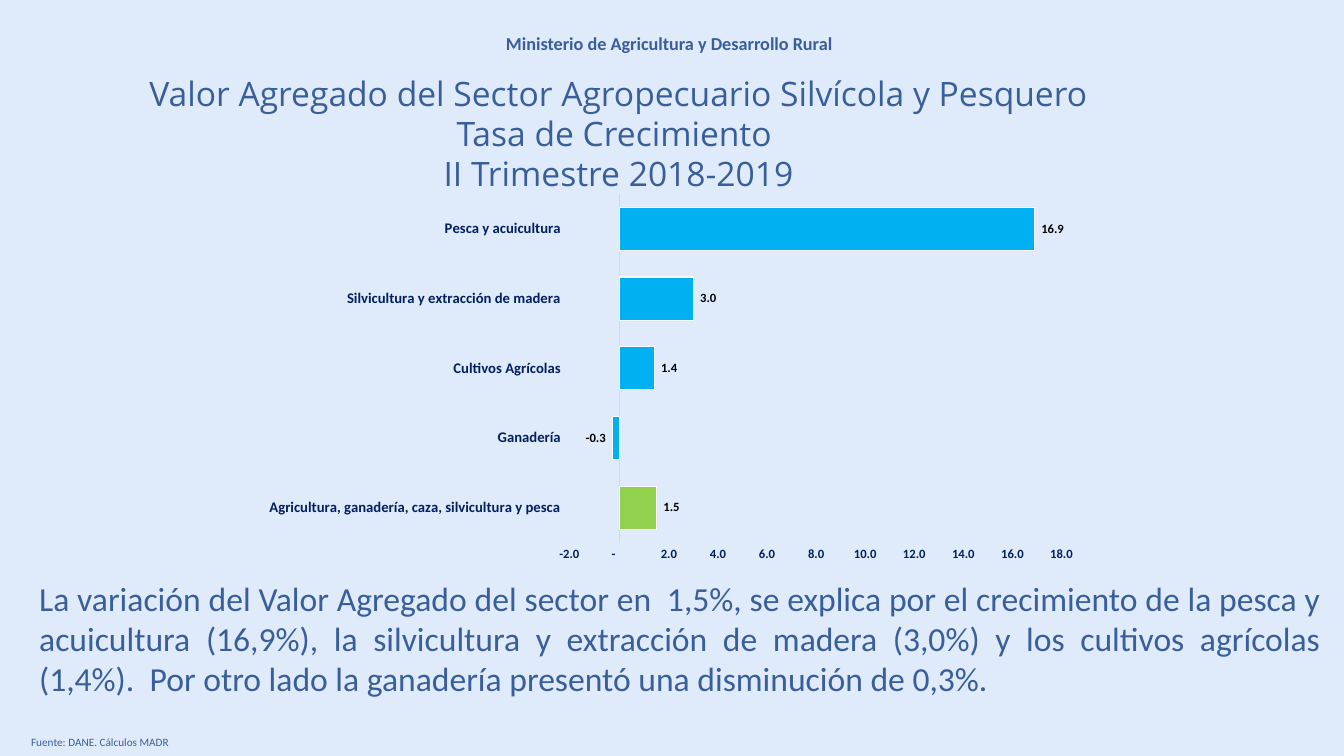
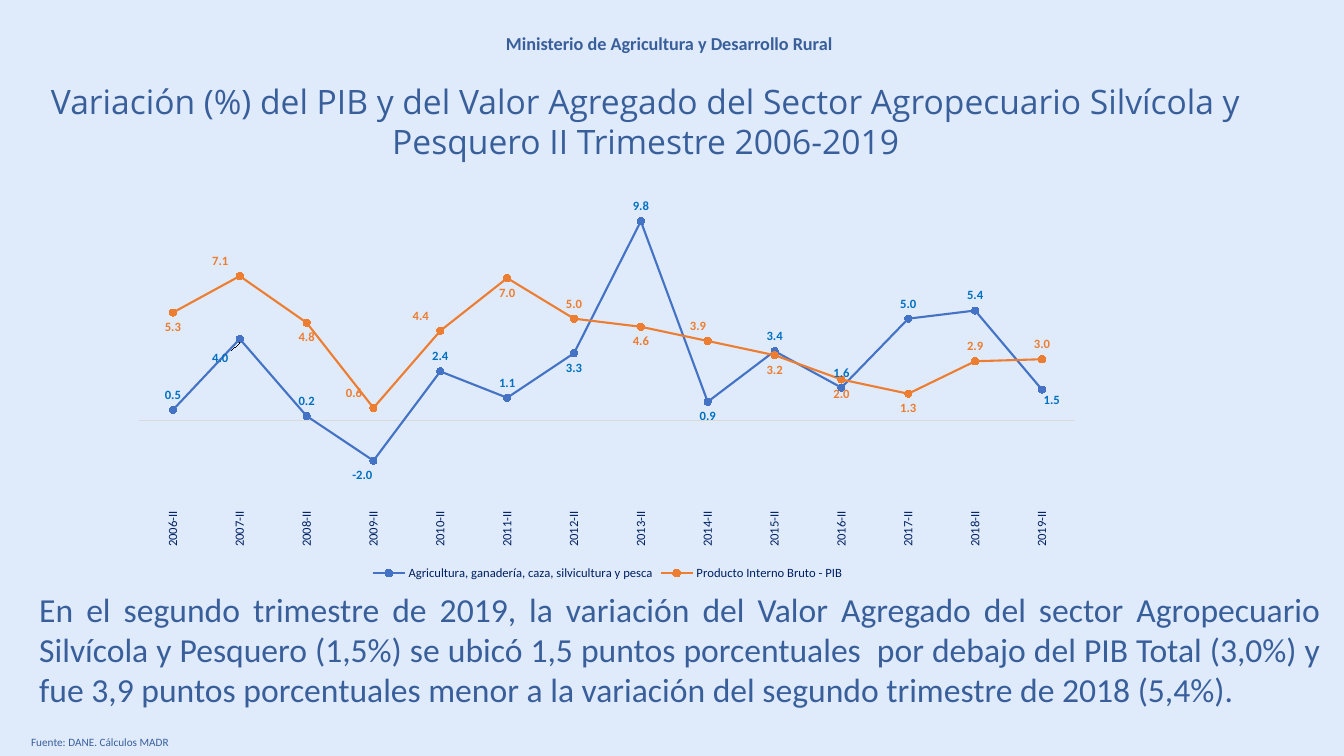
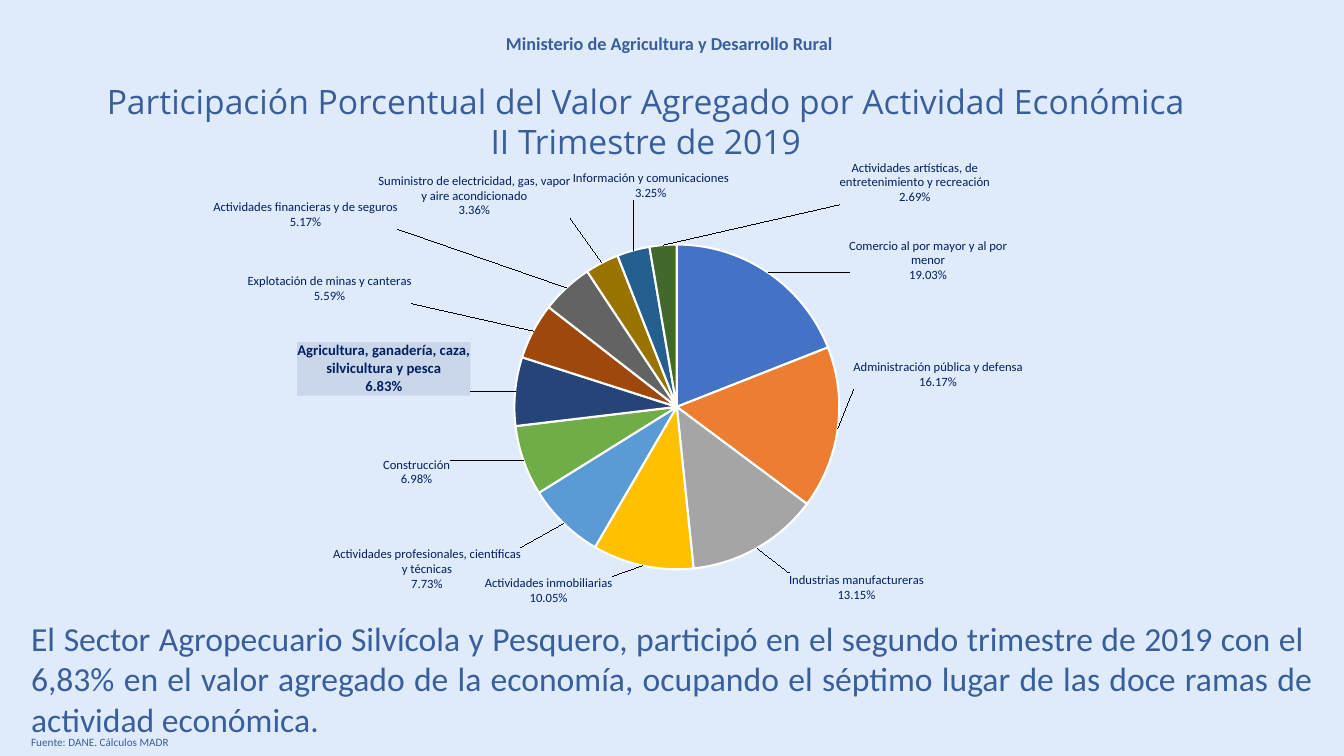
from lxml import etree
from pptx import Presentation
from pptx.chart.data import CategoryChartData
from pptx.dml.color import RGBColor
from pptx.enum.chart import XL_CHART_TYPE as ChartType
from pptx.enum.chart import XL_LABEL_POSITION as LabelPosition
from pptx.enum.chart import XL_LEGEND_POSITION as LegendPosition
from pptx.enum.chart import XL_MARKER_STYLE as MarkerStyle
from pptx.enum.chart import XL_TICK_LABEL_POSITION as TickLabelPosition
from pptx.enum.chart import XL_TICK_MARK as TickMark
from pptx.enum.text import MSO_ANCHOR as Anchor
from pptx.enum.text import MSO_AUTO_SIZE as AutoSize
from pptx.enum.text import PP_ALIGN as Align
from pptx.oxml.ns import qn
from pptx.util import Inches, Pt

BACKGROUND = RGBColor(0xDF, 0xEA, 0xFB)
TEXT_BLUE = RGBColor(0x39, 0x5F, 0x9B)
NAVY = RGBColor(0x00, 0x20, 0x60)
BLACK = RGBColor(0x00, 0x00, 0x00)
WHITE = RGBColor(0xFF, 0xFF, 0xFF)
AXIS_GREY = RGBColor(0xD9, 0xD9, 0xD9)
BAR_BLUE = RGBColor(0x00, 0xB0, 0xF0)
BAR_GREEN = RGBColor(0x92, 0xD0, 0x50)
LABEL_BLUE = RGBColor(0x00, 0x70, 0xC0)
LINE_BLUE = RGBColor(0x44, 0x72, 0xC4)
LINE_ORANGE = RGBColor(0xED, 0x7D, 0x31)
HIGHLIGHT = "CAD6EA"
SLICE_COLORS = [RGBColor.from_string(code) for code in (
    "4472C4", "ED7D31", "A5A5A5", "FFC000", "5B9BD5", "70AD47",
    "264478", "9E480E", "636363", "997300", "255E91", "43682B")]

BODY_FONT = "Calibri"
TITLE_FONT = "Open Sans"
NUMBER_FORMAT = '_-* #,##0.0_-;\\-* #,##0.0_-;_-* "-"??_-;'
PERCENT_FORMAT = "0.00%"
ABOVE, BELOW = LabelPosition.ABOVE, LabelPosition.BELOW

SECTOR = "Agricultura, ganadería, caza, silvicultura y pesca"
GROWTH = [
    (SECTOR, 1.5),
    ("Ganadería", -0.3),
    ("Cultivos Agrícolas", 1.4),
    ("Silvicultura y extracción de madera", 3),
    ("Pesca y acuicultura", 16.9),
]
QUARTERS = [f"{year}-II" for year in range(2006, 2020)]
SECTOR_RATES = [0.5, 4, 0.2, -2, 2.4, 1.1, 3.3, 9.8, 0.9, 3.4, 1.6, 5, 5.4, 1.5]
GDP_RATES = [5.3, 7.1, 4.8, 0.6, 4.4, 7, 5, 4.6, 3.9, 3.2, 2, 1.3, 2.9, 3]
SECTOR_LABELS = [
    (1, BELOW, -0.02, 0.01), (3, BELOW, -0.01, 0), (6, BELOW, 0, 0),
    (8, BELOW, 0, 0), (12, ABOVE, 0, 0), (13, BELOW, 0.01, -0.01),
]
GDP_LABELS = [
    (1, ABOVE, -0.02, 0), (3, ABOVE, -0.02, 0), (4, ABOVE, -0.02, 0),
    (6, ABOVE, 0, 0), (8, ABOVE, -0.01, 0), (12, ABOVE, 0, 0), (13, ABOVE, 0, 0),
]
SHARES = [
    ("Comercio al por mayor y al por menor", 19.03, 0.08, 0.03),
    ("Administración pública y defensa", 16.17, 0.01, -0.14),
    ("Industrias manufactureras", 13.15, 0.03, 0.04),
    ("Actividades inmobiliarias", 10.05, -0.03, 0.01),
    ("Actividades profesionales, científicas y técnicas", 7.73, -0.04, 0.04),
    ("Construcción", 6.98, -0.07, -0.01),
    (SECTOR, 6.83, -0.04, 0.01),
    ("Explotación de minas y canteras", 5.59, -0.12, -0.05),
    ("Actividades financieras y de seguros", 5.17, -0.17, -0.11),
    ("Suministro de electricidad, gas, vapor y aire acondicionado", 3.36, -0.03, -0.08),
    ("Información y comunicaciones", 3.25, 0.1, -0.09),
    ("Actividades artísticas, de entretenimiento y recreación", 2.69, 0.26, -0.07),
]


def style_font(font, size, color, bold=False, name=BODY_FONT):
    font.name = name
    font.size = Pt(size)
    font.bold = bold
    font.color.rgb = color


def fill_text(shape, lines, size, align, wrap=True, bold=False, name=BODY_FONT):
    frame = shape.text_frame
    frame.word_wrap = wrap
    frame.auto_size = AutoSize.SHAPE_TO_FIT_TEXT
    frame.vertical_anchor = Anchor.TOP
    for index, line in enumerate(lines):
        paragraph = frame.add_paragraph() if index else frame.paragraphs[0]
        paragraph.alignment = align
        run = paragraph.add_run()
        run.text = line
        style_font(run.font, size, TEXT_BLUE, bold, name)


def add_text(slide, place, line, size, align=Align.JUSTIFY, wrap=True, bold=False):
    box = slide.shapes.add_textbox(*map(Inches, place))
    fill_text(box, [line], size, align, wrap, bold)


def add_content_slide(presentation, title_place, title_lines, body_place, body, wrap=True):
    slide = presentation.slides.add_slide(presentation.slide_layouts[5])
    title = slide.shapes.title
    title.left, title.top, title.width, title.height = map(Inches, title_place)
    fill_text(title, title_lines, 24, Align.CENTER, wrap, name=TITLE_FONT)
    add_text(slide, (4.92, 0.27, 3.49, 0.32), "Ministerio de Agricultura y Desarrollo Rural",
             13, Align.LEFT, wrap=False, bold=True)
    add_text(slide, body_place, body, 24)
    add_text(slide, (0.21, 7.25, 12.91, 0.24), "Fuente: DANE. Cálculos MADR", 8)
    return slide


def chart_element(tag, **attributes):
    element = etree.Element(qn(tag))
    for name, value in attributes.items():
        element.set(name, str(value))
    return element


def manual_layout(**values):
    layout = chart_element("c:layout")
    manual = etree.SubElement(layout, qn("c:manualLayout"))
    for name, value in values.items():
        manual.append(chart_element(f"c:{name}", val=value))
    return layout


def set_plot_area(chart, left, top, width, height):
    plot_area = chart._chartSpace.chart.plotArea
    for layout in plot_area.findall(qn("c:layout")):
        plot_area.remove(layout)
    plot_area.insert(0, manual_layout(layoutTarget="inner", xMode="edge", yMode="edge",
                                      x=left, y=top, w=width, h=height))


def add_chart(slide, kind, place, categories, series, font_color):
    data = CategoryChartData()
    data.categories = categories
    for name, values in series:
        data.add_series(name, values)
    chart = slide.shapes.add_chart(kind, *map(Inches, place), data).chart
    chart.has_title = False
    chart.has_legend = False
    style_font(chart.font, 10, font_color)
    return chart


def style_category_axis(axis, size, bold=False):
    axis.tick_label_position = TickLabelPosition.LOW
    axis.major_tick_mark = TickMark.NONE
    axis.format.line.color.rgb = AXIS_GREY
    axis.format.line.width = Pt(0.75)
    style_font(axis.tick_labels.font, size, NAVY, bold)


def scale_axis(axis, low, high):
    axis.minimum_scale = low
    axis.maximum_scale = high
    axis.has_major_gridlines = False


def style_labels(labels, number_format, color, bold, position):
    labels.show_value = True
    labels.number_format = number_format
    labels.number_format_is_linked = False
    labels.position = position
    style_font(labels.font, 9, color, bold)


def place_label(point, position, offset, number_format, size, color, bold):
    label = point.data_label
    style_font(label.font, size, color, bold)
    label.position = position
    element = label._get_or_add_dLbl()
    element.insert(1, manual_layout(x=offset[0], y=offset[1]))
    element.insert(2, chart_element("c:numFmt", formatCode=number_format, sourceLinked=0))
    return element


def show_category_and_percent(element):
    for tag, shown in (("c:showVal", 0), ("c:showCatName", 1), ("c:showPercent", 1)):
        element.find(qn(tag)).set("val", str(shown))
    separator = chart_element("c:separator")
    separator.text = "\n"
    element.find(qn("c:showPercent")).getparent().insert(
        element.index(element.find(qn("c:showBubbleSize"))) + 1
        if element.find(qn("c:showBubbleSize")) is not None
        else element.index(element.find(qn("c:showPercent"))) + 1, separator)


def highlight_label(element):
    properties = element.find(qn("c:spPr"))
    if properties is None:
        properties = chart_element("c:spPr")
        element.find(qn("c:txPr")).addprevious(properties)
    fill = etree.SubElement(properties, qn("a:solidFill"))
    etree.SubElement(fill, qn("a:srgbClr")).set("val", HIGHLIGHT)


def add_growth_chart(slide):
    categories, values = zip(*GROWTH)
    chart = add_chart(slide, ChartType.BAR_CLUSTERED, (2.5, 1.85, 8.32, 3.8),
                      categories, [("Series 1", values)], BLACK)
    set_plot_area(chart, 0.38, 0.02, 0.585, 0.91)
    style_category_axis(chart.category_axis, 10.5, bold=True)
    axis = chart.value_axis
    scale_axis(axis, -2, 18)
    axis.major_unit = 2
    axis.major_tick_mark = TickMark.NONE
    axis.format.line.fill.background()
    axis.tick_labels.number_format = NUMBER_FORMAT
    axis.tick_labels.number_format_is_linked = False
    style_font(axis.tick_labels.font, 9, NAVY, True)
    plot = chart.plots[0]
    plot.gap_width = 61
    plot.overlap = 65
    plot.vary_by_categories = False
    series = plot.series[0]
    series.invert_if_negative = False
    for part, color in ((series, BAR_BLUE), (series.points[0], BAR_GREEN)):
        part.format.fill.solid()
        part.format.fill.fore_color.rgb = color
        part.format.line.color.rgb = WHITE
        part.format.line.width = Pt(0.75)
    style_labels(series.data_labels, NUMBER_FORMAT, BLACK, True, LabelPosition.OUTSIDE_END)


def add_variation_chart(slide):
    chart = add_chart(slide, ChartType.LINE_MARKERS, (1.19, 1.67, 9.67, 4.13), QUARTERS,
                      [(SECTOR, SECTOR_RATES), ("Producto Interno Bruto - PIB", GDP_RATES)],
                      LABEL_BLUE)
    set_plot_area(chart, 0.02, 0.02, 0.96, 0.78)
    style_category_axis(chart.category_axis, 9)
    chart.category_axis._element.find(qn("c:txPr")).find(qn("a:bodyPr")).set("rot", "-5400000")
    scale_axis(chart.value_axis, -4, 12)
    chart.value_axis.visible = False
    chart.has_legend = True
    chart.legend.position = LegendPosition.BOTTOM
    chart.legend.include_in_layout = False
    style_font(chart.legend.font, 9, NAVY)
    styles = ((LINE_BLUE, LABEL_BLUE, ABOVE, SECTOR_LABELS),
              (LINE_ORANGE, LINE_ORANGE, BELOW, GDP_LABELS))
    for series, (color, label_color, position, moved) in zip(chart.plots[0].series, styles):
        series.smooth = False
        series.format.line.color.rgb = color
        series.format.line.width = Pt(1.5)
        series.marker.style = MarkerStyle.CIRCLE
        series.marker.size = 5
        series.marker.format.fill.solid()
        series.marker.format.fill.fore_color.rgb = color
        series.marker.format.line.color.rgb = color
        style_labels(series.data_labels, NUMBER_FORMAT, label_color, True, position)
        for index, side, *offset in moved:
            place_label(series.points[index], side, offset, NUMBER_FORMAT, 9, label_color, True)


def add_share_chart(slide):
    categories, values, *offsets = zip(*SHARES)
    chart = add_chart(slide, ChartType.PIE, (1.23, 1.57, 9.62, 4.89),
                      categories, [("Series 1", values)], NAVY)
    set_plot_area(chart, 0.194, 0.175, 0.752, 0.659)
    plot = chart.plots[0]
    plot.vary_by_categories = True
    series = plot.series[0]
    style_labels(series.data_labels, PERCENT_FORMAT, NAVY, False, LabelPosition.OUTSIDE_END)
    show_category_and_percent(series.data_labels._element)
    for index, (color, offset) in enumerate(zip(SLICE_COLORS, zip(*offsets))):
        point = series.points[index]
        point.format.fill.solid()
        point.format.fill.fore_color.rgb = color
        point.format.line.color.rgb = WHITE
        point.format.line.width = Pt(1.5)
        is_sector = categories[index] == SECTOR
        element = place_label(point, LabelPosition.OUTSIDE_END, offset, PERCENT_FORMAT,
                              10.5 if is_sector else 9, NAVY, is_sector)
        show_category_and_percent(element)
        if is_sector:
            highlight_label(element)


def main():
    presentation = Presentation()
    presentation.slide_width = Inches(13.33)
    presentation.slide_height = Inches(7.5)
    background = presentation.slide_master.background.fill
    background.solid()
    background.fore_color.rgb = BACKGROUND

    wide_title = (0.11, 0.75, 12.59, 0.91)
    add_growth_chart(add_content_slide(
        presentation, (1.01, 0.67, 10.25, 1.31),
        ["Valor Agregado del Sector Agropecuario Silvícola y Pesquero",
         "Tasa de Crecimiento ", "II Trimestre 2018-2019"],
        (0.29, 5.68, 12.91, 1.31),
        "La variación del Valor Agregado del sector en  1,5%, se explica por el crecimiento "
        "de la pesca y acuicultura (16,9%), la silvicultura y extracción de madera (3,0%) y "
        "los cultivos agrícolas (1,4%).  Por otro lado la ganadería presentó una disminución "
        "de 0,3%.", wrap=False))
    add_variation_chart(add_content_slide(
        presentation, wide_title,
        ["Variación (%) del PIB y del Valor Agregado del Sector Agropecuario Silvícola y "
         "Pesquero II Trimestre 2006-2019"],
        (0.29, 5.79, 12.91, 1.31),
        "En el segundo trimestre de 2019, la variación del Valor Agregado del sector "
        "Agropecuario Silvícola y Pesquero (1,5%) se ubicó 1,5 puntos porcentuales  por "
        "debajo del PIB Total (3,0%) y fue 3,9 puntos porcentuales menor a la variación del "
        "segundo trimestre de 2018 (5,4%)."))
    add_share_chart(add_content_slide(
        presentation, wide_title,
        ["Participación Porcentual del Valor Agregado por Actividad Económica",
         "II Trimestre de 2019"],
        (0.21, 6.08, 12.91, 1.31),
        "El Sector Agropecuario Silvícola y Pesquero, participó en el segundo trimestre de "
        "2019 con el  6,83% en el valor agregado de la economía, ocupando el séptimo lugar "
        "de las doce ramas de actividad económica."))
    presentation.save("out.pptx")


if __name__ == "__main__":
    main()
